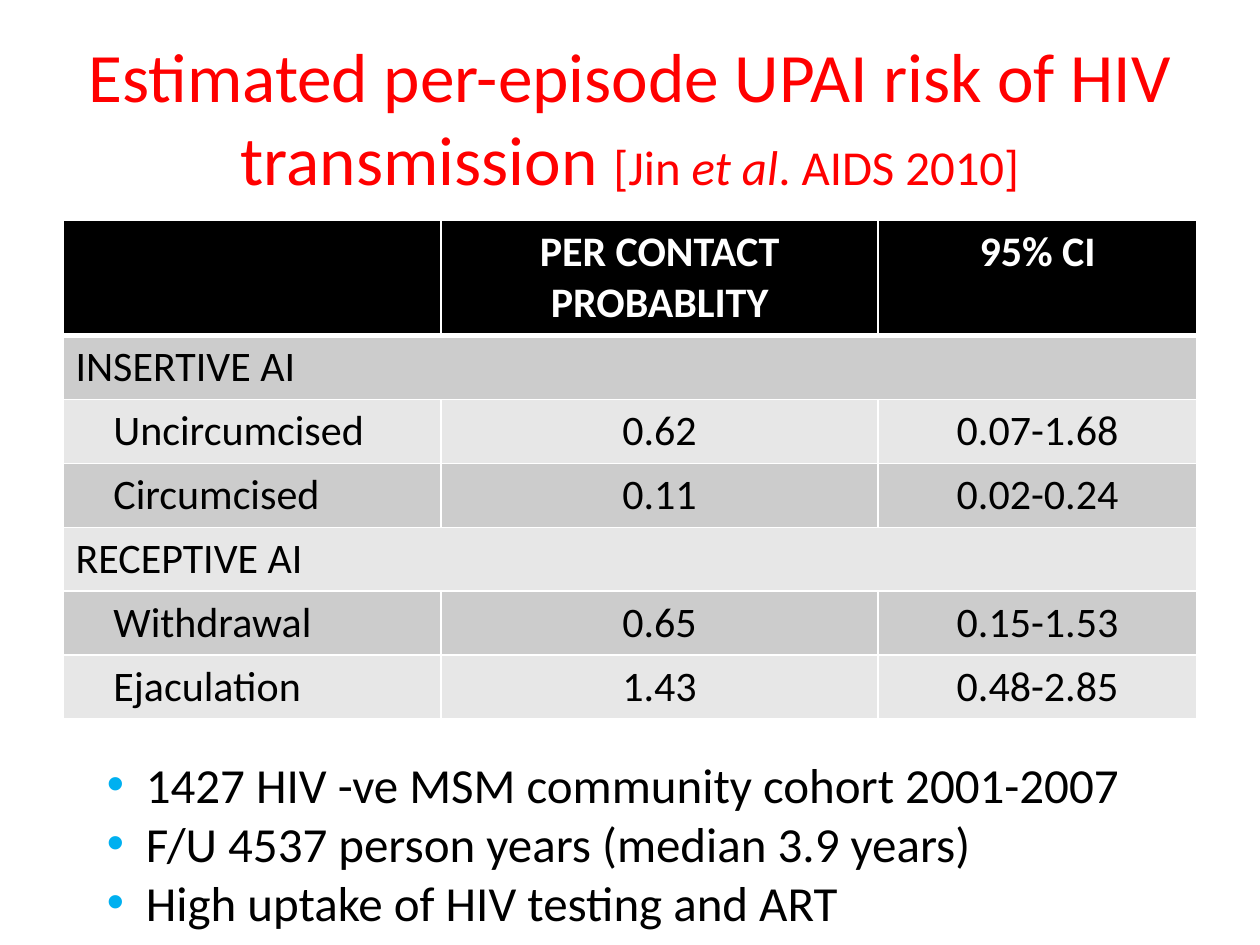
from lxml import etree
from pptx import Presentation
from pptx import util as u
from pptx.dml.color import RGBColor
from pptx.enum import text
from pptx.oxml.ns import qn

WIDTH, HEIGHT = u.Inches(10), u.Inches(7.5)
FONT = "Calibri"
COLORS = {
    "title": "FF0000", "ink": "000000", "paper": "FFFFFF",
    "band_dark": "CCCCCC", "band_light": "E7E7E7", "bullet": "00B0F0",
}
HEADINGS = ["", "PER CONTACT PROBABLITY", "95% CI"]
RISKS = [
    ["INSERTIVE AI"],
    ["Uncircumcised", "0.62", "0.07-1.68"],
    ["Circumcised", "0.11", "0.02-0.24"],
    ["RECEPTIVE AI"],
    ["Withdrawal", "0.65", "0.15-1.53"],
    ["Ejaculation", "1.43", "0.48-2.85"],
]
COHORT_NOTES = [
    "1427 HIV -ve MSM community cohort 2001-2007",
    "F/U 4537 person years (median 3.9 years)",
    "High uptake of HIV testing and ART",
]


def add_run(paragraph, words, size, color, **formats):
    run = paragraph.add_run()
    run.text = words
    run.font.color.rgb = RGBColor.from_string(COLORS[color])
    for name, value in {"name": FONT, "size": u.Pt(size), **formats}.items():
        setattr(run.font, name, value)


def add_title(slide):
    title = slide.shapes.title
    place = {"left": 0.05 * WIDTH, "top": 0.04 * HEIGHT,
             "width": 0.9 * WIDTH, "height": HEIGHT / 6}
    for name, value in place.items():
        setattr(title, name, int(value))
    frame = title.text_frame
    frame.auto_size = text.MSO_AUTO_SIZE.NONE
    frame.vertical_anchor = text.MSO_ANCHOR.MIDDLE
    line = frame.paragraphs[0]
    line.alignment = text.PP_ALIGN.CENTER
    add_run(line, "Estimated per-episode UPAI risk of HIV transmission ", 39.6, "title")
    for words, italic in [("[Jin ", False), ("et al", True), (". AIDS 2010]", False)]:
        add_run(line, words, 27.9, "title", italic=italic)


def set_borders(cell, bottom):
    """Draw white cell borders, with the bottom one in its own width."""
    properties = cell._tc.get_or_add_tcPr()
    for position, side in enumerate(["lnL", "lnR", "lnT", "lnB"]):
        width = bottom if side == "lnB" else 1
        border = etree.Element(qn(f"a:{side}"), w=str(u.Pt(width)))
        fill = etree.SubElement(border, qn("a:solidFill"))
        etree.SubElement(fill, qn("a:srgbClr"), val=COLORS["paper"])
        properties.insert(position, border)


def fill_cell(cell, words, fill, color, centred, bold=False, bottom=1):
    cell.fill.solid()
    cell.fill.fore_color.rgb = RGBColor.from_string(COLORS[fill])
    set_borders(cell, bottom)
    if words:
        line = cell.text_frame.paragraphs[0]
        line.alignment = text.PP_ALIGN.CENTER if centred else text.PP_ALIGN.LEFT
        add_run(line, words, 24, color, bold=bold)


def add_risk_table(slide):
    frame = slide.shapes.add_table(
        len(RISKS) + 1, len(HEADINGS), int(0.05 * WIDTH), u.Inches(1.75),
        int(0.9 * WIDTH), u.Inches(3.9))
    table = frame.table
    for column, width in zip(table.columns, [3, 3.47, 2.53]):
        column.width = u.Inches(width)
    for index, row in enumerate(table.rows):
        row.height = u.Inches(0.5 if index else 0.9)

    for column, heading in enumerate(HEADINGS):
        fill_cell(table.cell(0, column), heading, "ink", "paper", True, True, 3)
    for row, entries in enumerate(RISKS, start=1):
        band = "band_dark" if row % 2 else "band_light"
        is_group = len(entries) == 1
        if is_group:
            table.cell(row, 0).merge(table.cell(row, len(HEADINGS) - 1))
        else:
            table.cell(row, 0).margin_left = u.Inches(0.4)
        for column, entry in enumerate(entries):
            fill_cell(table.cell(row, column), entry, band, "ink", column > 0)


def add_bullet(paragraph):
    properties = paragraph._p.get_or_add_pPr()
    indent = u.Inches(0.31)
    properties.set("marL", str(indent))
    properties.set("indent", str(-indent))
    color = etree.SubElement(properties, qn("a:buClr"))
    etree.SubElement(color, qn("a:srgbClr"), val=COLORS["bullet"])
    etree.SubElement(properties, qn("a:buFont"), typeface="Arial")
    etree.SubElement(properties, qn("a:buChar"), char="•")


def add_cohort_notes(slide):
    box = slide.shapes.add_textbox(
        int(0.075 * WIDTH), u.Inches(5.94), u.Inches(8.34), u.Inches(1.51))
    frame = box.text_frame
    frame.word_wrap = True
    for index, note in enumerate(COHORT_NOTES):
        line = frame.add_paragraph() if index else frame.paragraphs[0]
        add_bullet(line)
        add_run(line, note, 28, "ink")


def main():
    deck = Presentation()
    deck.slide_width, deck.slide_height = WIDTH, HEIGHT
    slide = deck.slides.add_slide(deck.slide_layouts[5])
    add_title(slide)
    add_risk_table(slide)
    add_cohort_notes(slide)
    deck.save("out.pptx")


if __name__ == "__main__":
    main()
